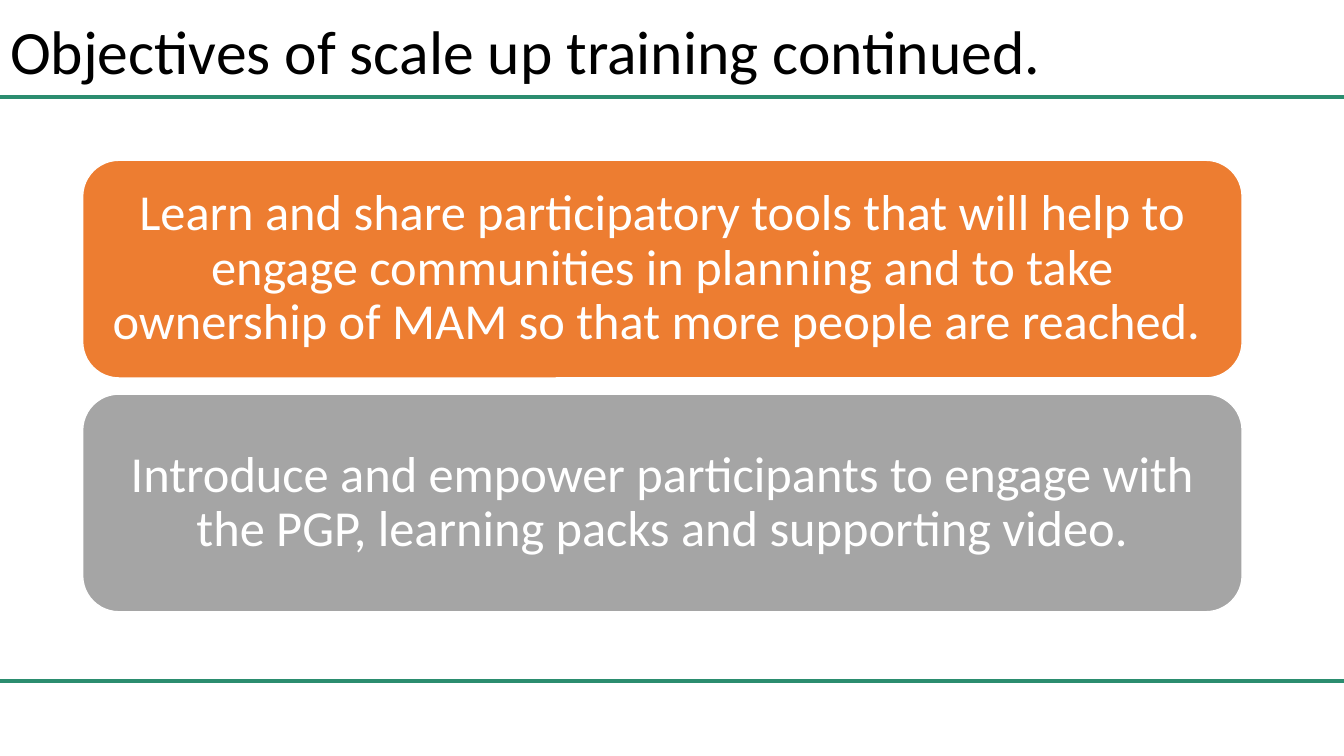
import pptx
import pptx.util
import pptx.dml.color
import pptx.enum.shapes
import pptx.enum.text
import pptx.oxml.ns
from lxml import etree

Inches = pptx.util.Inches
Pt = pptx.util.Pt

COLORS = {
    "rule": "2B8D6F",
    "title": "000000",
    "tools": "ED7D31",
    "packs": "A5A5A5",
    "white": "FFFFFF",
}
SLIDE_W, SLIDE_H = 13.33, 7.5
OBJECTIVES = [
    ("tools", "Learn and share participatory tools that will help to engage communities "
              "in planning and to take ownership of MAM so that more people are reached. "),
    ("packs", "Introduce and empower participants to engage with the PGP, "
              "learning packs and supporting video."),
]


def rgb(name):
    return pptx.dml.color.RGBColor.from_string(COLORS[name])


def format_text(tf, size, color, align):
    tf.word_wrap = True
    tf.vertical_anchor = pptx.enum.text.MSO_ANCHOR.MIDDLE
    p = tf.paragraphs[0]
    p.alignment = align
    p.line_spacing = 0.9
    font = p.runs[0].font
    font.name = "Calibri"
    font.size = Pt(size)
    font.color.rgb = rgb(color)


def add_rule(s, x, y, w):
    line = s.shapes.add_connector(
        pptx.enum.shapes.MSO_CONNECTOR.STRAIGHT,
        Inches(x), Inches(y), Inches(x + w), Inches(y))
    line.line.color.rgb = rgb("rule")
    line.line.width = Pt(3)
    etree.SubElement(line._element.spPr, pptx.oxml.ns.qn("a:effectLst"))


def place_title(s, x, y, w, h):
    title = s.shapes.title
    title.left, title.top, title.width, title.height = map(Inches, (x, y, w, h))
    tf = title.text_frame
    tf.text = "Objectives of scale up training continued."
    format_text(tf, 44, "title", pptx.enum.text.PP_ALIGN.LEFT)


def add_objectives(s, x, y, w, h, gap=0.16):
    card_h = (h - gap * (len(OBJECTIVES) - 1)) / len(OBJECTIVES)
    for i, (color, text) in enumerate(OBJECTIVES):
        sp = s.shapes.add_shape(
            pptx.enum.shapes.MSO_SHAPE.ROUNDED_RECTANGLE,
            Inches(x), Inches(y + i * (card_h + gap)), Inches(w), Inches(card_h))
        sp.shadow.inherit = False
        sp.fill.solid()
        sp.fill.fore_color.rgb = rgb(color)
        sp.line.color.rgb = rgb("white")
        sp.line.width = Pt(1)
        tf = sp.text_frame
        tf.text = text
        tf.margin_left = tf.margin_right = Inches(0.15)
        tf.margin_top = tf.margin_bottom = Inches(0.15)
        format_text(tf, 36, "white", pptx.enum.text.PP_ALIGN.CENTER)


def main():
    prs = pptx.Presentation()
    prs.slide_width, prs.slide_height = Inches(SLIDE_W), Inches(SLIDE_H)
    s = prs.slides.add_slide(prs.slide_layouts[5])
    for y in (6.76, 0.96):
        add_rule(s, 0, y, SLIDE_W)
    place_title(s, 0, 0.02, 11.5, 1.04)
    add_objectives(s, 0.82, 1.59, 11.5, 4.48)
    prs.save("out.pptx")


if __name__ == "__main__":
    main()
